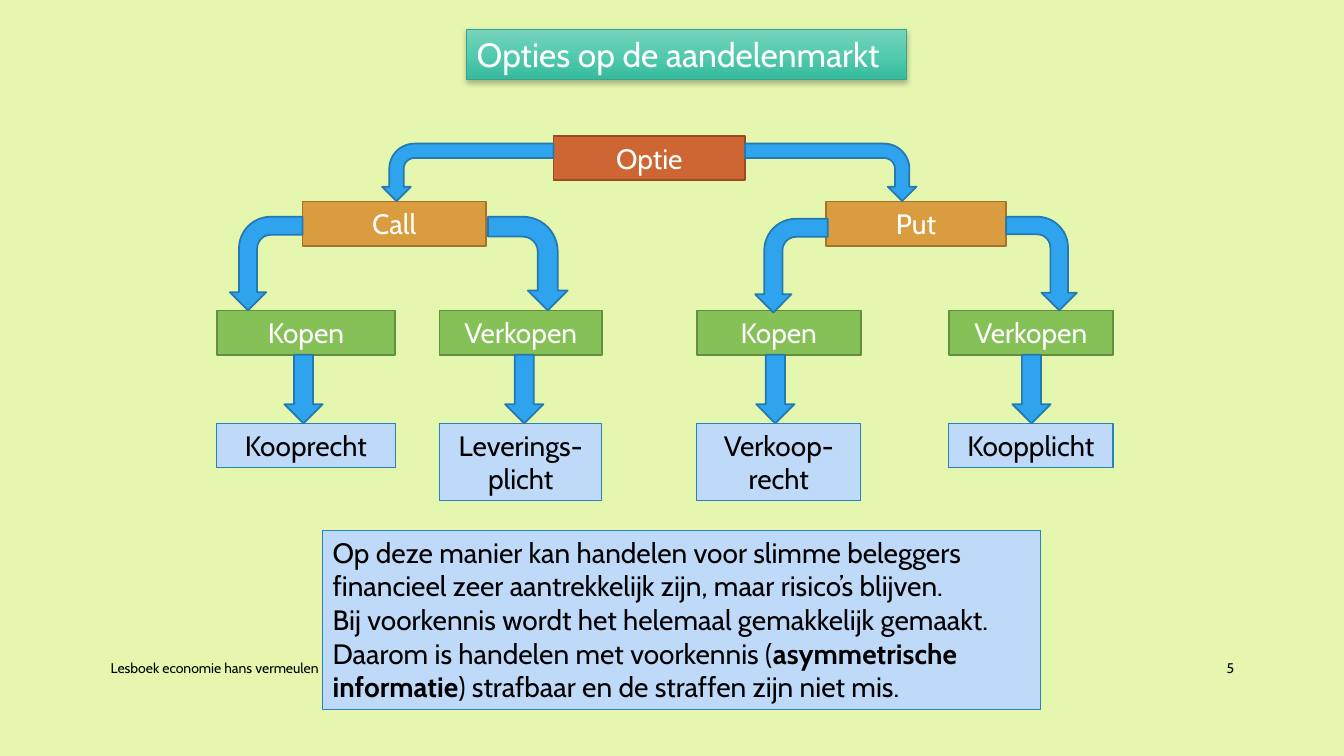
from copy import deepcopy

from lxml import etree
from pptx import Presentation
from pptx import util as u
from pptx.dml import color
from pptx.enum import shapes, text
from pptx.oxml import ns

CELL = u.Inches(0.1)
FONT = "Cabin"
COLORS = {
    "background": "E5F7AF", "white": "FFFFFF", "black": "000000",
    "root": "CE6633", "root_line": "984B26",
    "kind": "D99C3F", "kind_line": "A1732F",
    "action": "86C157", "action_line": "638F40",
    "result": "BFDAF9", "result_line": "2683BF",
    "arrow": "2FA3EE", "arrow_line": "2379B0",
    "title_top": "77D4BC", "title": "54CBAF", "title_bottom": "36BA9C",
    "title_line": "3CA28B",
}
ROOT_ROW, KIND_ROW, ACTION_ROW, RESULT_ROW = 13.5, 20, 30.8, 42
BOX_ROWS, TALL_ROWS = 4.4, 7.7
BRANCHES = [
    (21.5, 17.7, "Kopen", "Kooprecht", BOX_ROWS, 30.1),
    (43.6, 16.1, "Verkopen", "Leverings-plicht", TALL_ROWS, 52),
    (69.1, 16.3, "Kopen", "Verkoop-recht", TALL_ROWS, 76.9),
    (94.1, 16.3, "Verkopen", "Koopplicht", BOX_ROWS, 102.3),
]
BENDS = [
    (73.9, 14.25, 17, 5.7, False),
    (54.9, 14.25, 17, 5.7, True),
    (99.8, 21.5, 7, 9.3, False),
    (48.4, 21.5, 7.9, 9.3, False),
    (30, 21.5, 7.2, 9.3, True),
    (82.1, 21.7, 7.2, 9.3, True),
]


def rgb(name):
    return color.RGBColor.from_string(COLORS[name])


def cells(*lengths):
    return [round(length * CELL) for length in lengths]


def write(shape, paragraphs, size, ink, alignment):
    frame = shape.text_frame
    frame.word_wrap = True
    for index, runs in enumerate(paragraphs):
        paragraph = frame.paragraphs[0] if index == 0 else frame.add_paragraph()
        paragraph.alignment = alignment
        for words, bold in runs:
            run = paragraph.add_run()
            run.text = words
            run.font.name = FONT
            run.font.size = u.Pt(size)
            run.font.bold = bold
            run.font.color.rgb = rgb(ink)


def add_figure(slide, preset, place, style, line_width):
    shape = slide.shapes.add_shape(preset, *cells(*place))
    shape.shadow.inherit = False
    shape.fill.solid()
    shape.fill.fore_color.rgb = rgb(style)
    shape.line.color.rgb = rgb(style + "_line")
    shape.line.width = u.Pt(line_width)
    return shape


def add_box(slide, place, style, paragraphs, ink="white", line_width=1.25,
            size=20, alignment=text.PP_ALIGN.CENTER):
    shape = add_figure(slide, shapes.MSO_SHAPE.RECTANGLE, place, style, line_width)
    shape.text_frame.vertical_anchor = text.MSO_ANCHOR.TOP
    shape.text_frame.auto_size = text.MSO_AUTO_SIZE.SHAPE_TO_FIT_TEXT
    write(shape, paragraphs, size, ink, alignment)
    return shape


def add_bend(slide, start, top, reach, drop, leftward):
    middle = start + (-reach if leftward else reach) / 2
    place = (middle - drop / 2, top + (drop - reach) / 2, drop, reach)
    arrow = add_figure(slide, shapes.MSO_SHAPE.BENT_ARROW, place, "arrow", 1.25)
    arrow.rotation = 270 if leftward else 90
    if leftward:
        arrow.element.spPr.find(ns.qn("a:xfrm")).set("flipH", "1")


def add_title(slide):
    title = add_box(slide, (46.3, 2.9, 43.6, 5), "title",
                    [[("Opties op de aandelenmarkt", False)]],
                    line_width=0.75, size=24, alignment=text.PP_ALIGN.LEFT)
    title.fill.gradient()
    title.fill.gradient_angle = 270
    first = title.fill.gradient_stops[0]._gs
    first.addnext(deepcopy(first))
    names = ("title_top", "title", "title_bottom")
    for stop, name, position in zip(title.fill.gradient_stops, names, (0, 0.5, 1)):
        stop.color.rgb = rgb(name)
        stop.position = position
    effects = title.element.spPr.find(ns.qn("a:effectLst"))
    shadow = etree.SubElement(effects, ns.qn("a:outerShdw"), blurRad=str(u.Pt(4)),
                              dist=str(u.Pt(2)), dir="5400000", rotWithShape="0")
    tint = etree.SubElement(shadow, ns.qn("a:srgbClr"), val=COLORS["black"])
    etree.SubElement(tint, ns.qn("a:alpha"), val="28000")


def add_footer(slide, left, width, words, alignment):
    box = slide.shapes.add_textbox(*cells(left, 64.3, width, 4))
    box.text_frame.vertical_anchor = text.MSO_ANCHOR.MIDDLE
    write(box, [[(words, False)]], 10, "black", alignment)


def main():
    presentation = Presentation()
    presentation.slide_width, presentation.slide_height = u.Inches(13.33), u.Inches(7.5)
    slide = presentation.slides.add_slide(presentation.slide_layouts[6])
    slide.background.fill.solid()
    slide.background.fill.fore_color.rgb = rgb("background")

    add_box(slide, (54.9, ROOT_ROW, 19, BOX_ROWS), "root", [[("Optie", False)]])
    for left, width, words in ((30, 18.2, "Call"), (81.9, 17.9, "Put")):
        add_box(slide, (left, KIND_ROW, width, BOX_ROWS), "kind", [[(words, False)]])
    for left, width, action, result, height, _ in BRANCHES:
        add_box(slide, (left, ACTION_ROW, width, BOX_ROWS), "action", [[(action, False)]])
        add_box(slide, (left, RESULT_ROW, width, height), "result", [[(result, False)]],
                ink="black", line_width=0.75)
    for bend in BENDS:
        add_bend(slide, *bend)
    for *_, center in BRANCHES:
        add_figure(slide, shapes.MSO_SHAPE.DOWN_ARROW,
                   (center - 1.9, ACTION_ROW + BOX_ROWS, 3.8, 6.8), "arrow", 1.25)

    explanation = [
        [("Op deze manier kan handelen voor slimme beleggers financieel zeer "
          "aantrekkelijk zijn, maar risico’s blijven.", False)],
        [("Bij voorkennis wordt het helemaal gemakkelijk gemaakt. Daarom is "
          "handelen met voorkennis (", False),
         ("asymmetrische informatie", True),
         (") strafbaar en de straffen zijn niet mis.", False)],
    ]
    add_box(slide, (32, 52.6, 71.2, 17.8), "result", explanation, ink="black",
            line_width=0.75, alignment=text.PP_ALIGN.LEFT)
    add_title(slide)
    add_footer(slide, 10, 73, "Lesboek economie hans vermeulen", text.PP_ALIGN.LEFT)
    add_footer(slide, 115, 8.4, "5", text.PP_ALIGN.RIGHT)
    presentation.save("out.pptx")


if __name__ == "__main__":
    main()
